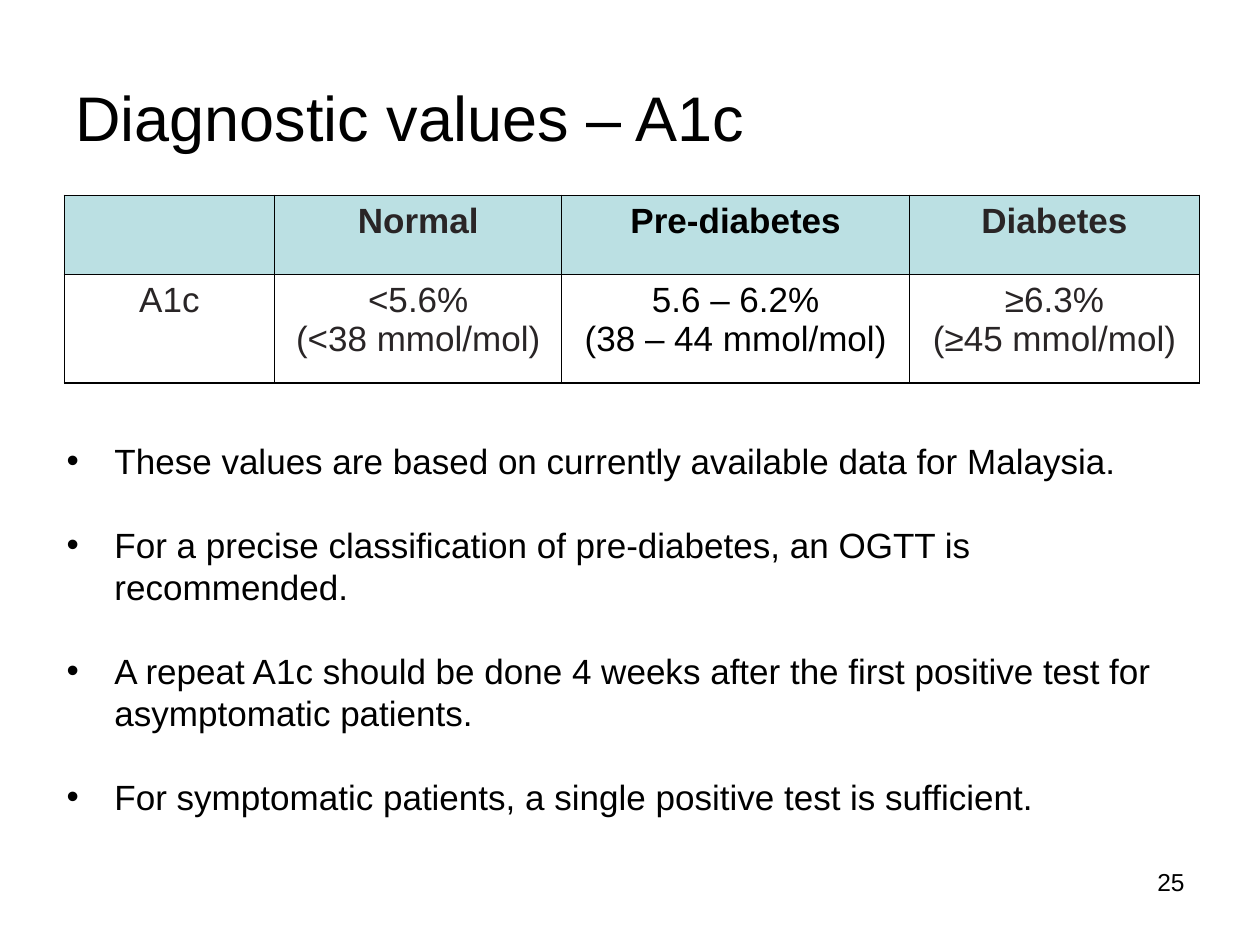
"""Build the slide on diagnostic A1c values."""
from dataclasses import dataclass

from lxml.etree import SubElement
from pptx import Presentation
from pptx.dml.color import RGBColor
from pptx.enum.text import MSO_ANCHOR, PP_ALIGN
from pptx.oxml.ns import qn
from pptx.util import Inches, Pt

TITLE = "Diagnostic values – A1c"
PAGE_NUMBER = "25"
TABLE = [
    [[], ["Normal"], ["Pre-diabetes"], ["Diabetes"]],
    [
        ["A1c"],
        ["<5.6%", "(<38 mmol/mol)"],
        ["5.6 – 6.2%", "(38 – 44 mmol/mol)"],
        ["≥6.3%", "(≥45 mmol/mol)"],
    ],
]
POINTS = [
    "These values are based on currently available data for Malaysia.",
    "For a precise classification of pre-diabetes, an OGTT is recommended.",
    "A repeat A1c should be done 4 weeks after the first positive test for asymptomatic patients.",
    "For symptomatic patients, a single positive test is sufficient.",
]

SLIDE_WIDTH, SLIDE_HEIGHT = Inches(10), Inches(7.5)
AREAS = {
    "title": (5, 4, 90, 16.67),
    "table": (5.1, 20.67, 90.1, 19.87),
    "points": (4.3, 45.87, 92.9, 47.2),
    "number": (71.7, 91.07, 23.3, 6.93),
}
COLUMN_SHARES = (16.7, 22.8, 27.6, 23)
ROW_SHARES = (8.4, 11.47)
ACCENT_COLUMN = 2
BORDERS = {"lnL": 0.75, "lnR": 0.75, "lnT": 1, "lnB": 1}
INDENT = Inches(0.38)


@dataclass(frozen=True)
class Theme:
    font: str = "Arial"
    ink: str = "000000"
    table_ink: str = "292526"
    header: str = "BBE0E3"
    paper: str = "FFFFFF"
    title_size: int = 36
    body_size: int = 20
    number_size: int = 14
    body_leading: int = 24


THEME = Theme()


def place(name):
    left, top, width, height = AREAS[name]
    return (
        int(SLIDE_WIDTH * left / 100),
        int(SLIDE_HEIGHT * top / 100),
        int(SLIDE_WIDTH * width / 100),
        int(SLIDE_HEIGHT * height / 100),
    )


def write(frame, lines, size, color=THEME.ink, bold=False, align=PP_ALIGN.LEFT):
    frame.word_wrap = True
    for index, line in enumerate(lines):
        para = frame.add_paragraph() if index else frame.paragraphs[0]
        para.alignment = align
        span = para.add_run()
        span.text = line
        span.font.name = THEME.font
        span.font.size = Pt(size)
        span.font.bold = bold
        span.font.color.rgb = RGBColor.from_string(color)


def add_text(page, name, lines, size, align=PP_ALIGN.LEFT):
    frame = page.shapes.add_textbox(*place(name)).text_frame
    write(frame, lines, size, align=align)
    return frame


def add_points(page):
    frame = add_text(page, "points", POINTS, THEME.body_size)
    for index, para in enumerate(frame.paragraphs):
        para.line_spacing = Pt(THEME.body_leading)
        para.space_before = Pt(THEME.body_leading if index else 0)
        properties = para._p.get_or_add_pPr()
        properties.set("marL", str(INDENT))
        properties.set("indent", str(-INDENT))
        SubElement(properties, qn("a:buFont"), typeface=THEME.font)
        SubElement(properties, qn("a:buChar"), char="•")


def style_cell(cell, fill):
    properties = cell._tc.get_or_add_tcPr()
    for side, width in BORDERS.items():
        line = SubElement(properties, qn(f"a:{side}"), w=str(Pt(width)))
        paint = SubElement(line, qn("a:solidFill"))
        SubElement(paint, qn("a:srgbClr"), val=THEME.ink)
    cell.fill.solid()
    cell.fill.fore_color.rgb = RGBColor.from_string(fill)


def add_values_table(page):
    table = page.shapes.add_table(len(TABLE), len(TABLE[0]), *place("table")).table
    for column, share in zip(table.columns, COLUMN_SHARES):
        column.width = int(SLIDE_WIDTH * share / 100)
    for row, share in zip(table.rows, ROW_SHARES):
        row.height = int(SLIDE_HEIGHT * share / 100)
    for row_index, row in enumerate(TABLE):
        is_header = row_index == 0
        for column_index, lines in enumerate(row):
            cell = table.cell(row_index, column_index)
            style_cell(cell, THEME.header if is_header else THEME.paper)
            color = THEME.ink if column_index == ACCENT_COLUMN else THEME.table_ink
            write(cell.text_frame, lines, THEME.body_size, color, is_header, PP_ALIGN.CENTER)


def main():
    deck = Presentation()
    deck.slide_width, deck.slide_height = SLIDE_WIDTH, SLIDE_HEIGHT
    page = deck.slides.add_slide(deck.slide_layouts[6])
    add_text(page, "number", [PAGE_NUMBER], THEME.number_size, PP_ALIGN.RIGHT)
    title = add_text(page, "title", [TITLE], THEME.title_size)
    title.vertical_anchor = MSO_ANCHOR.MIDDLE
    add_points(page)
    add_values_table(page)
    deck.save("out.pptx")


if __name__ == "__main__":
    main()
